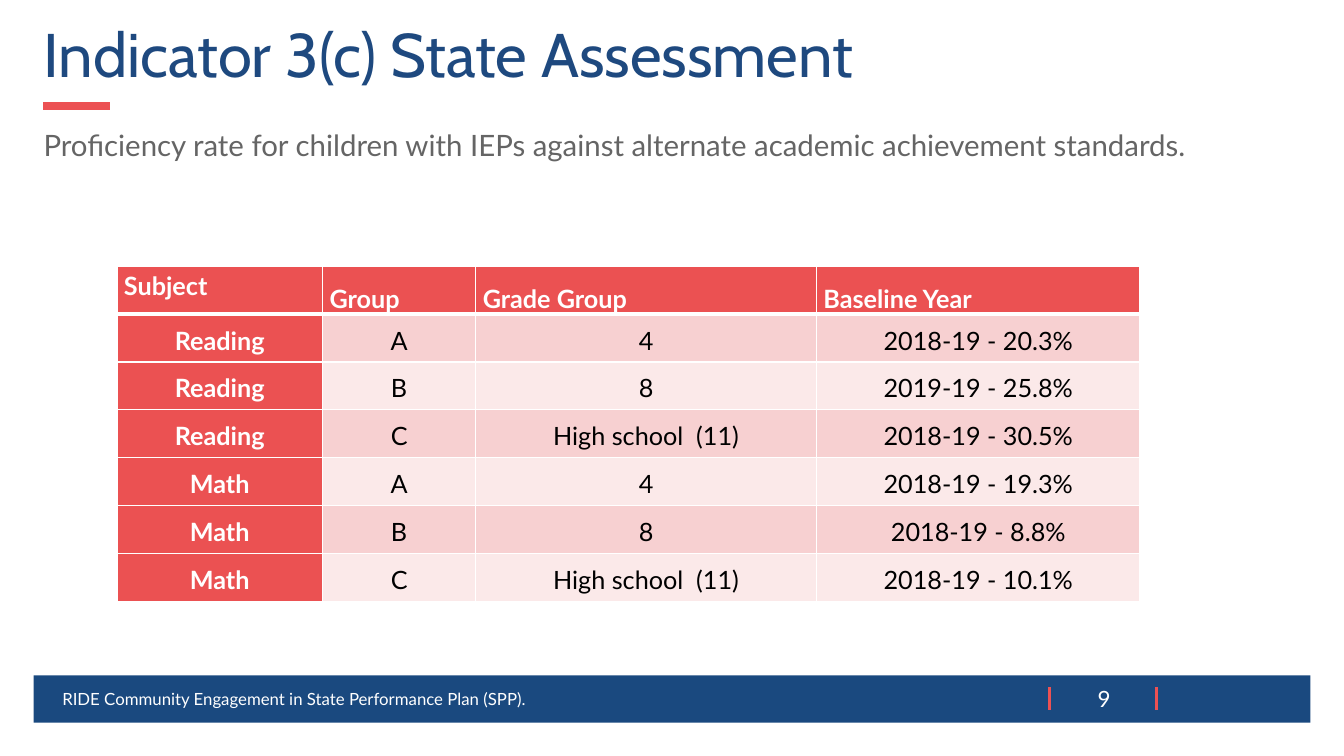
from lxml import etree
from pptx import Presentation
from pptx import util as u
from pptx.dml.color import RGBColor
from pptx.enum import shapes, text
from pptx.oxml.ns import qn

WIDTH, HEIGHT = u.Inches(13.33), u.Inches(7.5)
COLOURS = {
    "navy": "1A497F", "title": "1E497F", "accent": "EC5153", "header": "EB5152",
    "band_dark": "F7D0D1", "band_light": "FBE9E9",
    "grey": "656565", "white": "FFFFFF", "black": "000000",
}
HEADINGS = ["Subject", "Group", "Grade Group", "Baseline Year"]
GRADES = {"A": "4", "B": "8", "C": "High school  (11)"}
BASELINES = {
    "Reading": ["2018-19 - 20.3%", "2019-19 - 25.8%", "2018-19 - 30.5%"],
    "Math": ["2018-19 - 19.3%", "2018-19 - 8.8%", "2018-19 - 10.1%"],
}
COLUMN_SHARES = [15.3, 11.4, 25.35, 24.08]
ROW_SHARE = 6.34
MARGIN, CONTENT = 2.5, 95
LEFT, CENTRE = text.PP_ALIGN.LEFT, text.PP_ALIGN.CENTER
TOP, MIDDLE, BOTTOM = (text.MSO_ANCHOR.TOP, text.MSO_ANCHOR.MIDDLE,
                       text.MSO_ANCHOR.BOTTOM)


def across(percent):
    return round(WIDTH * percent / 100)


def down(percent):
    return round(HEIGHT * percent / 100)


def area(left, top, width, height):
    return across(left), down(top), across(width), down(height)


def rgb(name):
    return RGBColor.from_string(COLOURS[name])


def write(frame, words, size, colour, font="Lato", align=LEFT, bold=False, spacing=1.0):
    frame.text = words
    paragraph = frame.paragraphs[0]
    paragraph.alignment = align
    paragraph.line_spacing = spacing
    run_font = paragraph.runs[0].font
    run_font.name, run_font.size, run_font.bold = font, u.Pt(size), bold
    run_font.color.rgb = rgb(colour)


def add_title(slide, words):
    title = slide.shapes.title
    title.left, title.top, title.width, title.height = area(MARGIN, 2.53, CONTENT, 10.27)
    title.text_frame.vertical_anchor = TOP
    write(title.text_frame, words, 44, "title", font="Cabin", spacing=0.9)


def add_label(slide, box, words, size, colour, anchor=MIDDLE, **style):
    frame = slide.shapes.add_textbox(*area(*box)).text_frame
    frame.word_wrap = True
    frame.vertical_anchor = anchor
    write(frame, words, size, colour, **style)


def add_accent(slide, start, end, weight):
    rule = slide.shapes.add_connector(
        shapes.MSO_CONNECTOR.STRAIGHT,
        across(start[0]), down(start[1]), across(end[0]), down(end[1]))
    rule.line.color.rgb = rgb("accent")
    rule.line.width = u.Pt(weight)
    etree.SubElement(rule._element.spPr, qn("a:effectLst"))


def add_footer(slide, words, page):
    bar = slide.shapes.add_shape(
        shapes.MSO_SHAPE.RECTANGLE, *area(MARGIN, 89.33, CONTENT, 6.27))
    bar.shadow.inherit = False
    bar.fill.solid()
    bar.fill.fore_color.rgb = rgb("navy")
    bar.line.fill.background()
    for tick in (78.1, 86.05):
        add_accent(slide, (tick, 90.93), (tick, 93.87), 2.25)
    add_label(slide, (3.9, 89.73, 63.54, 5.33), words, 12, "white")
    add_label(slide, (79.75, 90, 4.8, 4.93), page, 16, "white", align=CENTRE)


def set_borders(cell, top, bottom):
    """Draw white cell edges; top and bottom are weights in points."""
    properties = cell._tc.get_or_add_tcPr()
    for side, weight in {"L": 1, "R": 1, "T": top, "B": bottom}.items():
        edge = etree.SubElement(properties, qn(f"a:ln{side}"), w=str(u.Pt(weight)))
        fill = etree.SubElement(edge, qn("a:solidFill"))
        etree.SubElement(fill, qn("a:srgbClr"), val=COLOURS["white"])


def format_cell(cell, words, row, column):
    is_heading, is_subject = row == 0, column == 0
    strong = is_heading or is_subject
    set_borders(cell, top=3 if row == 1 else 1, bottom=3 if is_heading else 1)
    cell.fill.solid()
    band = "band_dark" if row % 2 else "band_light"
    cell.fill.fore_color.rgb = rgb("header" if strong else band)
    cell.margin_left = cell.margin_right = u.Inches(0.07)
    cell.margin_top = cell.margin_bottom = 0
    if is_heading:
        cell.vertical_anchor = TOP if is_subject else BOTTOM
    else:
        cell.vertical_anchor = MIDDLE
    write(cell.text_frame, words, 18, "white" if strong else "black",
          align=LEFT if is_heading else CENTRE, bold=strong, spacing=1.15)


def add_baseline_table(slide):
    records = [HEADINGS] + [
        [subject, group, grade, rate]
        for subject, rates in BASELINES.items()
        for (group, grade), rate in zip(GRADES.items(), rates)]
    table = slide.shapes.add_table(
        len(records), len(HEADINGS),
        *area(8.7, 35.2, sum(COLUMN_SHARES), ROW_SHARE * len(records))).table
    for column, share in zip(table.columns, COLUMN_SHARES):
        column.width = across(share)
    for row, record in enumerate(records):
        table.rows[row].height = down(ROW_SHARE)
        for column, words in enumerate(record):
            format_cell(table.cell(row, column), words, row, column)


def main():
    deck = Presentation()
    deck.slide_width, deck.slide_height = WIDTH, HEIGHT
    slide = deck.slides.add_slide(deck.slide_layouts[5])
    add_title(slide, "Indicator 3(c) State Assessment")
    add_accent(slide, (3.23, 14), (8.18, 14), 6)
    add_footer(slide, "RIDE Community Engagement in State Performance Plan (SPP).", "9")
    add_label(slide, (MARGIN, 15.07, CONTENT, 12.4),
              "Proficiency rate for children with IEPs against alternate "
              "academic achievement standards.",
              21, "grey", anchor=TOP, spacing=1.23)
    add_baseline_table(slide)
    deck.save("out.pptx")


if __name__ == "__main__":
    main()
